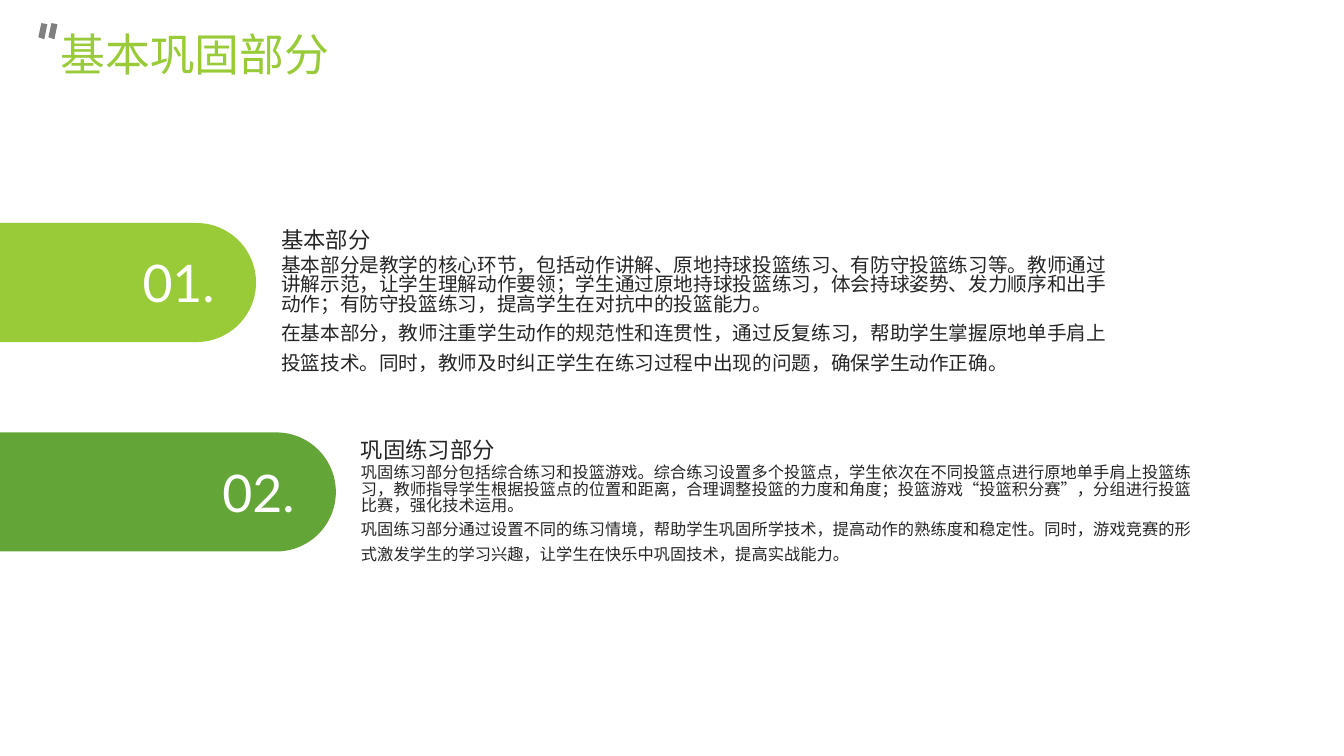
from pptx import Presentation
from pptx.dml.color import RGBColor
from pptx.enum.shapes import MSO_SHAPE
from pptx.enum.text import MSO_ANCHOR, MSO_AUTO_SIZE, PP_ALIGN
from pptx.oxml.ns import qn
from pptx.util import Inches, Pt

WIDE, HIGH = 13.33, 7.5
HAN, LATIN = "Noto Sans CJK SC", "Lato"
LIME, GREEN, INK, GREY, WHITE = "99CB38", "63A537", "262626", "808080", "FFFFFF"
STEP_X, STEP_Y = 5.94, 27.7

PARTS = [
    ("01.", LIME, "基本部分", 14, [
        "基本部分是教学的核心环节，包括动作讲解、原地持球投篮练习、有防守投篮练习等。教师通过讲解示范，让学生理解动作要领；学生通过原地持球投篮练习，体会持球姿势、发力顺序和出手动作；有防守投篮练习，提高学生在对抗中的投篮能力。",
        "在基本部分，教师注重学生动作的规范性和连贯性，通过反复练习，帮助学生掌握原地单手肩上投篮技术。同时，教师及时纠正学生在练习过程中出现的问题，确保学生动作正确。",
    ]),
    ("02.", GREEN, "巩固练习部分", 11.6, [
        "巩固练习部分包括综合练习和投篮游戏。综合练习设置多个投篮点，学生依次在不同投篮点进行原地单手肩上投篮练习，教师指导学生根据投篮点的位置和距离，合理调整投篮的力度和角度；投篮游戏“投篮积分赛”，分组进行投篮比赛，强化技术运用。",
        "巩固练习部分通过设置不同的练习情境，帮助学生巩固所学技术，提高动作的熟练度和稳定性。同时，游戏竞赛的形式激发学生的学习兴趣，让学生在快乐中巩固技术，提高实战能力。",
    ]),
]


def col(n):
    """Return n hundredths of the slide's width."""
    return Inches(WIDE * n / 100)


def row(n):
    """Return n hundredths of the slide's height."""
    return Inches(HIGH * n / 100)


def paint(fill, color):
    """Make a fill solid in a hex colour."""
    fill.solid()
    fill.fore_color.rgb = RGBColor.from_string(color)


def place(shape, x, y, w, h):
    """Put a shape on the grid."""
    shape.left, shape.top = col(x), row(y)
    shape.width, shape.height = col(w), row(h)


def plain(shape, color):
    """Give a shape a flat fill without line or shadow."""
    paint(shape.fill, color)
    shape.line.fill.background()
    shape.shadow.inherit = False


def write(shape, lines, size, color, font=HAN, gaps=(1,),
          anchor=MSO_ANCHOR.TOP, align=PP_ALIGN.LEFT):
    """Write paragraphs in a box without insets or bullets."""
    frame = shape.text_frame
    frame.text = "\n".join(lines)
    frame.word_wrap = True
    frame.auto_size = MSO_AUTO_SIZE.NONE
    frame.vertical_anchor = anchor
    frame.margin_left = frame.margin_right = 0
    frame.margin_top = frame.margin_bottom = 0
    for para, gap in zip(frame.paragraphs, gaps):
        para.alignment = align
        para.line_spacing = gap
        para.space_before = para.space_after = Pt(0)
        props = para._p.get_or_add_pPr()
        props.set("marL", "0")
        props.set("indent", "0")
        props.append(props.makeelement(qn("a:buNone"), {}))
        for run in para.runs:
            run.font.size, run.font.name, run.font.bold = Pt(size), font, False
            paint(run.font.fill, color)
            mark = run._r.get_or_add_rPr()
            mark.append(mark.makeelement(qn("a:ea"), {"typeface": font}))


def add_bar(slide, y, w, h, color):
    """Draw a bar from the left edge with a round right end."""
    long, thick = col(w), row(h)
    bar = slide.shapes.add_shape(
        MSO_SHAPE.ROUND_2_SAME_RECTANGLE, (long - thick) // 2,
        row(y) + (thick - long) // 2, thick, long)
    bar.rotation = 90
    bar.adjustments[0], bar.adjustments[1] = 0.5, 0
    plain(bar, color)


def add_quote(slide):
    """Draw the two slanted strokes beside the title."""
    first, *rest = [
        [(Inches(x + dx), Inches(y)) for x, y in
         ((0.41, 0.23), (0.47, 0.24), (0.44, 0.39), (0.38, 0.37))]
        for dx in (0.1, 0)]
    pen = slide.shapes.build_freeform(*first[0])
    pen.add_line_segments(first[1:])
    for stroke in rest:
        pen.move_to(*stroke[0])
        pen.add_line_segments(stroke[1:])
    plain(pen.convert_to_shape(), GREY)


def add_part(slide, i, part):
    """Build one numbered part with its heading and text."""
    num, color, head, size, lines = part
    dx, dy = i * STEP_X, i * STEP_Y
    add_bar(slide, 29.5 + dy, 19.05 + dx, 15.75, color)
    label = slide.shapes.add_textbox(0, 0, 0, 0)
    place(label, 6.98 + dx, 33.2 + dy, 9, 8.27)
    write(label, [num], 37, WHITE, LATIN,
          anchor=MSO_ANCHOR.MIDDLE, align=PP_ALIGN.RIGHT)
    title, body = (slide.placeholders[2 * i + k] for k in (1, 2))
    place(title, 20.92 + dx, 27.8 + dy, 62.04, 5.73)
    write(title, [head], 16, INK, gaps=(1.3,), anchor=MSO_ANCHOR.BOTTOM)
    place(body, 20.92 + dx, 33.95 + dy, 62.04, 20)
    write(body, lines, size, INK, gaps=(0.83, 1.26))


def main():
    """Build the slide and save it."""
    deck = Presentation()
    deck.slide_width, deck.slide_height = Inches(WIDE), Inches(HIGH)
    slide = deck.slides.add_slide(deck.slide_layouts[4])
    for i, part in enumerate(PARTS):
        add_part(slide, i, part)
    title = slide.shapes.title
    place(title, 4.5, 3.2, 82.37, 6.27)
    write(title, ["基本巩固部分"], 32, LIME, gaps=(1.2,), anchor=MSO_ANCHOR.MIDDLE)
    add_quote(slide)
    deck.save("out.pptx")


if __name__ == "__main__":
    main()
